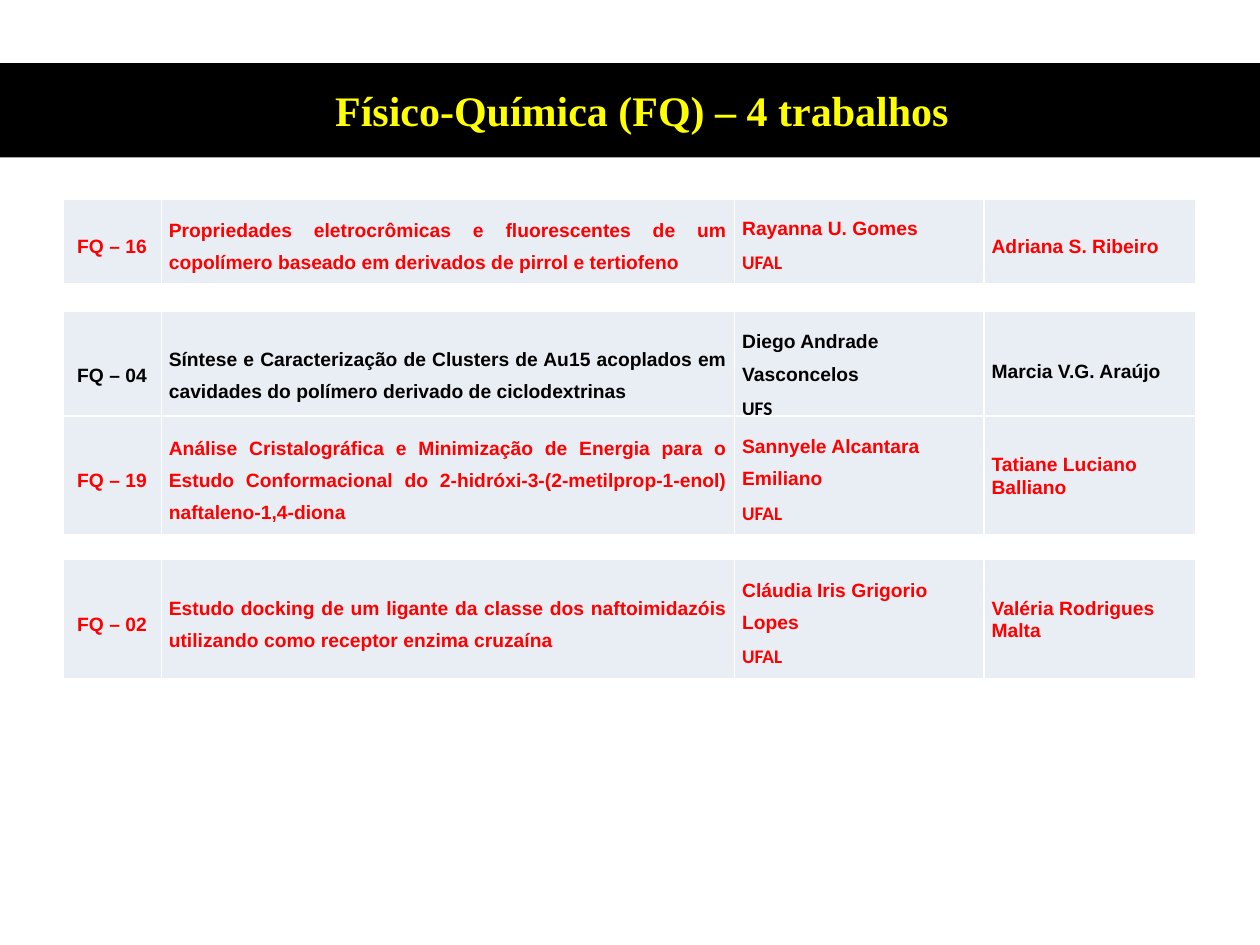
from typing import NamedTuple

import pptx
import pptx.dml.color
import pptx.enum.shapes
import pptx.enum.text
import pptx.oxml
import pptx.oxml.ns
import pptx.util

Inches = pptx.util.Inches
Pt = pptx.util.Pt
Color = pptx.dml.color.RGBColor.from_string
Align = pptx.enum.text.PP_ALIGN
Anchor = pptx.enum.text.MSO_ANCHOR


class Theme:
    band = "000000"
    title = "FFFF00"
    cell = "E9EDF4"
    rule = "FFFFFF"
    red = "FF0000"
    black = "000000"
    head_font = "Times New Roman"
    body_font = "Arial"
    place_font = "Calibri"
    head_size = Pt(24)
    body_size = Pt(11)
    rule_size = Pt(1)


class Paper(NamedTuple):
    top: float
    code: str
    topic: str
    author: str
    place: str
    guide: str
    color: str = Theme.red
    height: float = 0.63
    loose: bool = False  # guide name set at one and a half lines


LEFT = 0.5
WIDTHS = (0.78, 4.55, 1.98, 1.68)
INSET = Inches(0.06)

PAPERS = (
    Paper(1.58, "FQ – 16",
          "Propriedades eletrocrômicas e fluorescentes de um copolímero "
          "baseado em derivados de pirrol e tertiofeno",
          "Rayanna U. Gomes", "UFAL", "Adriana S. Ribeiro", loose=True),
    Paper(2.47, "FQ – 04",
          "Síntese e Caracterização de Clusters de Au15 acoplados em "
          "cavidades do polímero derivado de ciclodextrinas",
          "Diego Andrade Vasconcelos", "UFS", "Marcia V.G. Araújo",
          color=Theme.black),
    Paper(3.3, "FQ – 19",
          "Análise Cristalográfica e Minimização de Energia para o Estudo "
          "Conformacional do 2-hidróxi-3-(2-metilprop-1-enol) "
          "naftaleno-1,4-diona",
          "Sannyele Alcantara Emiliano", "UFAL", "Tatiane Luciano Balliano",
          height=0.89),
    Paper(4.44, "FQ – 02",
          "Estudo docking de um ligante da classe dos naftoimidazóis "
          "utilizando como receptor enzima cruzaína",
          "Cláudia Iris Grigorio Lopes", "UFAL", "Valéria Rodrigues Malta"),
)


def style_text(para, font: str, size: int, color: str, align) -> None:
    para.alignment = align
    para.font.name = font
    para.font.size = size
    para.font.bold = True
    para.font.color.rgb = Color(color)


def draw_rules(cell) -> None:
    props = cell._tc.get_or_add_tcPr()
    for side in ("lnL", "lnR", "lnT", "lnB"):
        props.append(pptx.oxml.parse_xml(
            f'<a:{side} {pptx.oxml.ns.nsdecls("a")} w="{Theme.rule_size}">'
            f'<a:solidFill><a:srgbClr val="{Theme.rule}"/></a:solidFill>'
            f'</a:{side}>'))


def fill_cell(cell, lines: tuple[str, ...], color: str, align,
              pad: int = INSET) -> list:
    draw_rules(cell)
    cell.fill.solid()
    cell.fill.fore_color.rgb = Color(Theme.cell)
    cell.vertical_anchor = Anchor.MIDDLE
    cell.margin_left = cell.margin_right = INSET
    cell.margin_top = cell.margin_bottom = pad
    cell.text = "\n".join(lines)
    paras = list(cell.text_frame.paragraphs)
    for para in paras:
        style_text(para, Theme.body_font, Theme.body_size, color, align)
        para.line_spacing = 1.5
    return paras


def draw_paper(slide, paper: Paper) -> None:
    table = slide.shapes.add_table(
        1, len(WIDTHS), Inches(LEFT), Inches(paper.top),
        Inches(sum(WIDTHS)), Inches(paper.height)).table
    table.first_row = table.horz_banding = False
    for column, width in zip(table.columns, WIDTHS):
        column.width = Inches(width)
    code, topic, author, guide = table.rows[0].cells

    fill_cell(code, (paper.code,), paper.color, Align.CENTER)
    fill_cell(topic, (paper.topic,), paper.color, Align.JUSTIFY)
    paras = fill_cell(author, (paper.author, paper.place), paper.color,
                      Align.LEFT)
    paras[1].font.name = Theme.place_font
    paras = fill_cell(guide, (paper.guide,), paper.color, Align.LEFT, pad=0)
    if not paper.loose:
        paras[0].line_spacing = 1.07
        paras[0].space_after = Pt(5)


def draw_head(slide, text: str) -> None:
    # Band goes behind the title
    band = slide.shapes.add_shape(
        pptx.enum.shapes.MSO_SHAPE.RECTANGLE,
        0, Inches(0.5), Inches(10), Inches(0.75))
    band.shadow.inherit = False
    band.fill.solid()
    band.fill.fore_color.rgb = Color(Theme.band)
    band.line.fill.background()

    title = slide.shapes.title
    title.element.addprevious(band.element)
    title.left, title.top = Inches(0.27), Inches(0.62)
    title.width, title.height = Inches(9.65), Inches(0.5)
    frame = title.text_frame
    frame.text = text
    frame.word_wrap = True
    frame.auto_size = pptx.enum.text.MSO_AUTO_SIZE.SHAPE_TO_FIT_TEXT
    frame.vertical_anchor = Anchor.TOP
    style_text(frame.paragraphs[0], Theme.head_font, Theme.head_size,
               Theme.title, Align.CENTER)


def main() -> None:
    deck = pptx.Presentation()
    deck.slide_width, deck.slide_height = Inches(10), Inches(7.5)
    slide = deck.slides.add_slide(deck.slide_layouts[5])
    draw_head(slide, "Físico-Química (FQ) – 4 trabalhos")
    for paper in PAPERS:
        draw_paper(slide, paper)
    deck.save("out.pptx")


if __name__ == "__main__":
    main()
